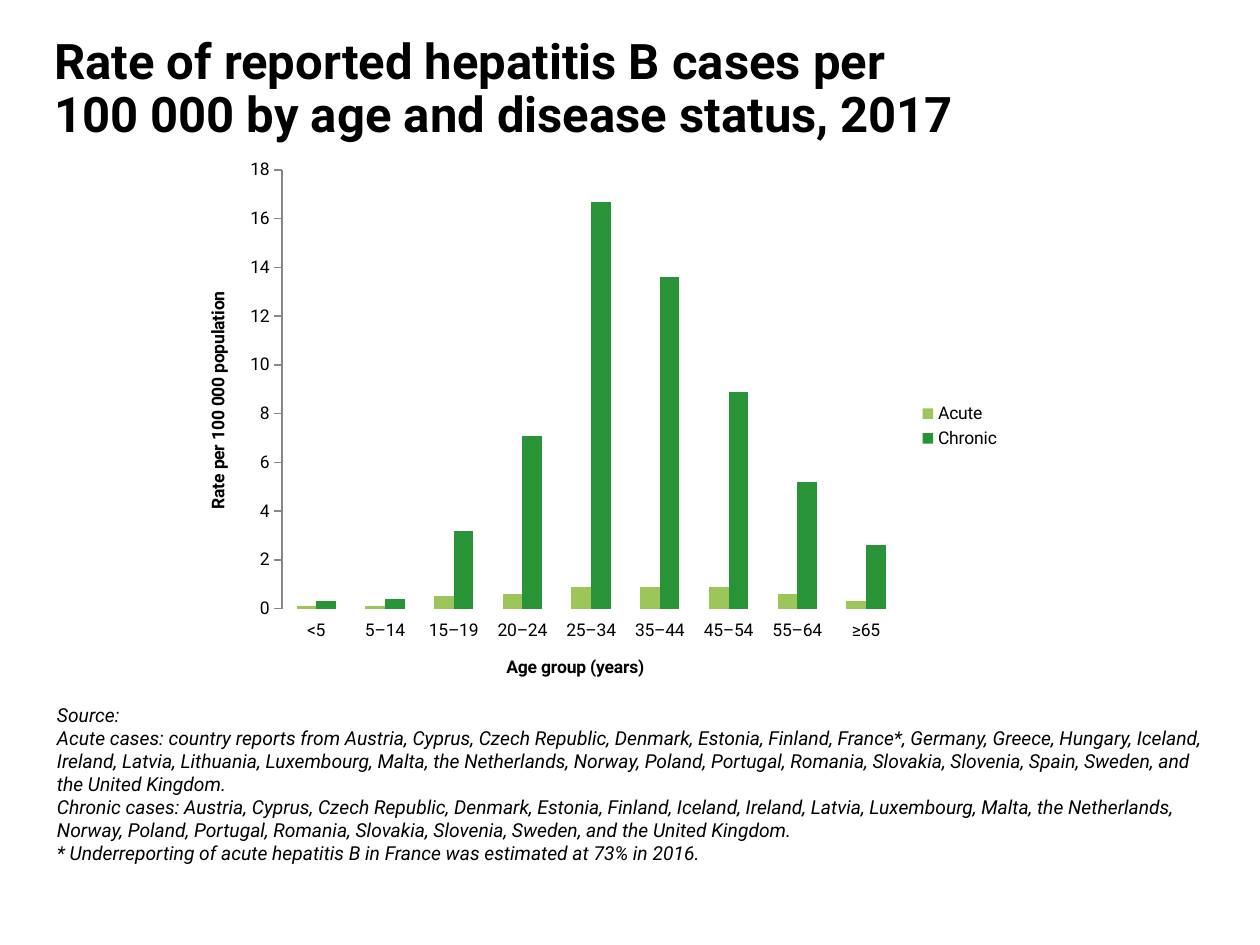
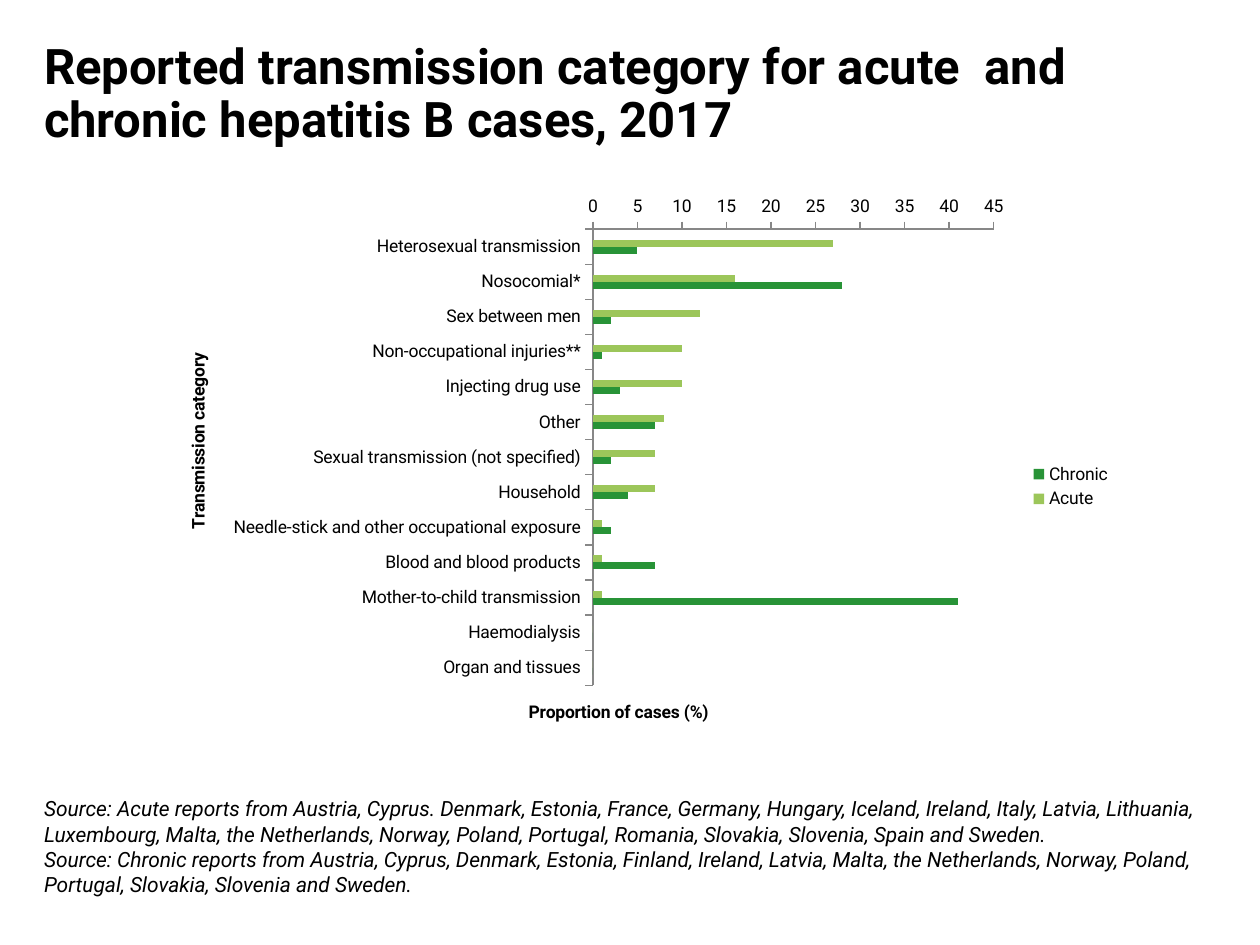
from lxml import etree
from pptx import Presentation
from pptx.chart.data import CategoryChartData
from pptx.dml.color import RGBColor
from pptx.enum.chart import (XL_AXIS_CROSSES as Crosses, XL_CHART_TYPE as ChartType,
                             XL_LEGEND_POSITION as LegendPosition, XL_TICK_MARK as Tick)
from pptx.enum.text import MSO_ANCHOR as Anchor, MSO_AUTO_SIZE as AutoSize, PP_ALIGN as Align
from pptx.oxml.ns import qn
from pptx.util import Inches, Pt

# Shared look
PX = Inches(1) / 126
FONT = "Roboto"
BLACK, AXIS_GREY = "000000", "878787"
STATUS_COLOURS = {"Acute": "9CC65A", "Chronic": "289337"}

# Slide 1: rate by age
AGE_GROUPS = ["<5", "5–14", "15–19", "20–24", "25–34", "35–44", "45–54", "55–64", "≥65"]
AGE_RATES = {
    "Acute": [0.1, 0.1, 0.5, 0.6, 0.9, 0.9, 0.9, 0.6, 0.3],
    "Chronic": [0.3, 0.4, 3.2, 7.1, 16.7, 13.6, 8.9, 5.2, 2.6],
}
AGE_SOURCES = [
    "Source:",
    "Acute cases: country reports from Austria, Cyprus, Czech Republic, Denmark, Estonia, "
    "Finland, France*, Germany, Greece, Hungary, Iceland, Ireland, Latvia, Lithuania, "
    "Luxembourg, Malta, the Netherlands, Norway, Poland, Portugal, Romania, Slovakia, "
    "Slovenia, Spain, Sweden, and the United Kingdom.",
    "Chronic cases: Austria, Cyprus, Czech Republic, Denmark, Estonia, Finland, Iceland, "
    "Ireland, Latvia, Luxembourg, Malta, the Netherlands, Norway, Poland, Portugal, Romania, "
    "Slovakia, Slovenia, Sweden, and the United Kingdom.",
    "* Underreporting of acute hepatitis B in France was estimated at 73% in 2016.",
]

# Slide 2: share by transmission route: (acute, chronic)
ROUTES = {
    "Heterosexual transmission": (27, 5),
    "Nosocomial*": (16, 28),
    "Sex between men": (12, 2),
    "Non-occupational injuries**": (10, 1),
    "Injecting drug use": (10, 3),
    "Other": (8, 7),
    "Sexual transmission (not specified)": (7, 2),
    "Household": (7, 4),
    "Needle-stick and other occupational exposure": (1, 2),
    "Blood and blood products": (1, 7),
    "Mother-to-child transmission": (1, 41),
    "Haemodialysis": (0, 0),
    "Organ and tissues": (0, 0),
}
ROUTE_SOURCES = [
    "Source: Acute reports from Austria, Cyprus. Denmark, Estonia, France, Germany, Hungary, "
    "Iceland, Ireland, Italy, Latvia, Lithuania, Luxembourg, Malta, the Netherlands, Norway, "
    "Poland, Portugal, Romania, Slovakia, Slovenia, Spain and Sweden.",
    "Source: Chronic reports from Austria, Cyprus, Denmark, Estonia, Finland, Ireland, Latvia, "
    "Malta, the Netherlands, Norway, Poland, Portugal, Slovakia, Slovenia and Sweden.",
]


def emu(*lengths):
    return [round(length * PX) for length in lengths]


def rgb(colour):
    return RGBColor.from_string(colour)


def style_font(font, size, bold=False, italic=False):
    font.name, font.size = FONT, Pt(size)
    font.bold, font.italic = bold, italic
    font.color.rgb = rgb(BLACK)


def add_run(paragraph, text, size, **style):
    run = paragraph.add_run()
    run.text = text
    style_font(run.font, size, **style)


def prepare_frame(frame, anchor):
    frame.margin_left = frame.margin_right = frame.margin_top = frame.margin_bottom = 0
    frame.word_wrap, frame.auto_size = True, AutoSize.NONE
    frame.vertical_anchor = anchor


def add_titled_slide(deck, lines, box):
    slide = deck.slides.add_slide(deck.slide_layouts[5])
    title = slide.shapes.title
    title.left, title.top, title.width, title.height = emu(*box)
    prepare_frame(title.text_frame, Anchor.MIDDLE)
    heading = title.text_frame.paragraphs[0]
    heading.alignment, heading.line_spacing = Align.LEFT, 0.9
    for index, line in enumerate(lines):
        if index:
            heading.add_line_break()
        add_run(heading, line, 28, bold=True)
    return slide


def add_sources(slide, sources, box, size):
    frame = slide.shapes.add_textbox(*emu(*box)).text_frame
    prepare_frame(frame, Anchor.TOP)
    for index, source in enumerate(sources):
        paragraph = frame.add_paragraph() if index else frame.paragraphs[0]
        add_run(paragraph, source, size, italic=True)


def style_axis(axis, title):
    axis.has_major_gridlines = False
    axis.major_tick_mark, axis.minor_tick_mark = Tick.OUTSIDE, Tick.NONE
    axis.format.line.color.rgb = rgb(AXIS_GREY)
    axis.format.line.width = Pt(0.75)
    add_run(axis.axis_title.text_frame.paragraphs[0], title, 10, bold=True)


def add_status_chart(slide, kind, box, categories, rates, axis_titles, top, step, gap):
    chart_data = CategoryChartData()
    chart_data.categories = categories
    for status, values in rates.items():
        chart_data.add_series(status, values)
    chart = slide.shapes.add_chart(kind, *emu(*box), chart_data).chart
    chart.has_title = False
    style_font(chart.font, 10)

    plot = chart.plots[0]
    plot.gap_width, plot.overlap, plot.vary_by_categories = gap, 0, False
    for series in plot.series:
        series.invert_if_negative = False
        series.format.fill.solid()
        series.format.fill.fore_color.rgb = rgb(STATUS_COLOURS[series.name])

    for axis, title in zip((chart.category_axis, chart.value_axis), axis_titles):
        style_axis(axis, title)
    scale = chart.value_axis
    scale.minimum_scale, scale.maximum_scale, scale.major_unit = 0, top, step
    scale.tick_labels.number_format = "0"
    scale.tick_labels.number_format_is_linked = False

    chart.has_legend = True
    chart.legend.position = LegendPosition.RIGHT
    chart.legend.include_in_layout = False
    return chart


def place_plot(chart, **fractions):
    """Fix the inner plot area as fractions of the chart."""
    area = chart.plots[0]._element.getparent()
    layout = area.find(qn("c:layout"))
    if layout is None:
        layout = etree.Element(qn("c:layout"))
        area.insert(0, layout)
    manual = etree.SubElement(layout, qn("c:manualLayout"))
    settings = {"layoutTarget": "inner", "xMode": "edge", "yMode": "edge", **fractions}
    for name, value in settings.items():
        etree.SubElement(manual, qn(f"c:{name}")).set("val", str(value))


def add_age_slide(deck):
    slide = add_titled_slide(
        deck, ["Rate of reported hepatitis B cases per", "100 000 by age and disease status, 2017"],
        (54, 25, 1016, 131))
    add_sources(slide, AGE_SOURCES, (57, 703, 1160, 189), 11)
    chart = add_status_chart(
        slide, ChartType.COLUMN_CLUSTERED, (181, 149, 832, 554), AGE_GROUPS, AGE_RATES,
        ("Age group (years)", "Rate per 100 000 population"), top=18, step=2, gap=150)
    chart.category_axis.format.line.fill.background()


def add_transmission_slide(deck):
    slide = add_titled_slide(
        deck, ["Reported transmission category for acute  and chronic hepatitis B cases, 2017"],
        (44, 30, 1034, 131))
    add_sources(slide, ROUTE_SOURCES, (44, 796, 1166, 102), 12)
    shares = dict(zip(STATUS_COLOURS, zip(*ROUTES.values())))
    chart = add_status_chart(
        slide, ChartType.BAR_CLUSTERED, (122, 194, 1002, 585), list(ROUTES), shares,
        ("Transmission category", "Proportion of cases (%)"), top=45, step=5, gap=300)
    # First route on top, with the value scale kept at the bottom
    chart.category_axis.reverse_order = True
    chart.category_axis.crosses = Crosses.MAXIMUM
    place_plot(chart, x=0.47, y=0.06, w=0.4, h=0.78)


def main():
    deck = Presentation()
    deck.slide_width, deck.slide_height = Inches(10), Inches(7.5)
    add_age_slide(deck)
    add_transmission_slide(deck)
    deck.save("out.pptx")


if __name__ == "__main__":
    main()
